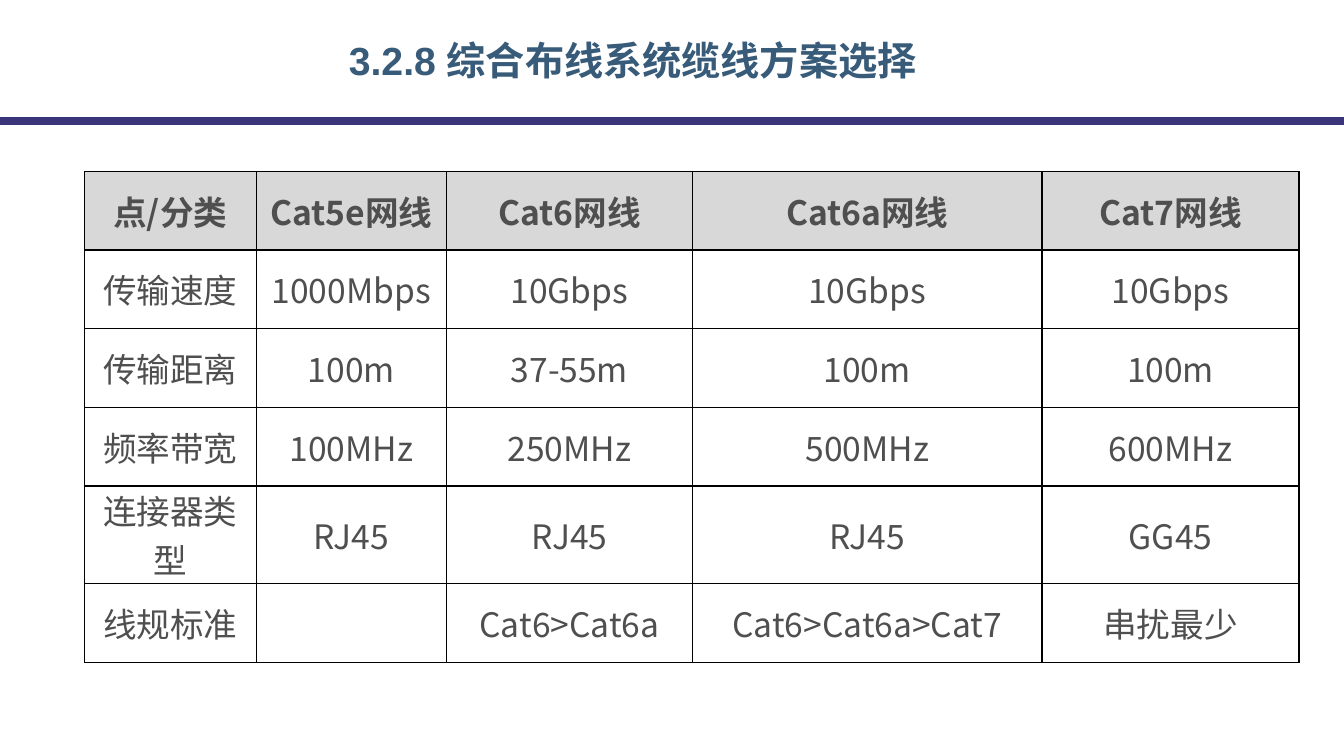
"""Build the slide comparing cable categories for structured cabling."""
from pptx import Presentation
from pptx.dml.color import RGBColor
from pptx.enum import shapes, text
from pptx.oxml import parse_xml
from pptx.oxml import ns
from pptx.util import Pt

HEADING = "3.2.8 综合布线系统缆线方案选择"
CABLES = [
    ("点/分类", "Cat5e网线", "Cat6网线", "Cat6a网线", "Cat7网线"),
    ("传输速度", "1000Mbps", "10Gbps", "10Gbps", "10Gbps"),
    ("传输距离", "100m", "37-55m", "100m", "100m"),
    ("频率带宽", "100MHz", "250MHz", "500MHz", "600MHz"),
    ("连接器类型", "RJ45", "RJ45", "RJ45", "GG45"),
    ("线规标准", "", "Cat6>Cat6a", "Cat6>Cat6a>Cat7", "串扰最少"),
]
COLUMN_WIDTHS = (122.7, 135.9, 175.7, 249.8, 183.5)
ROW_HEIGHT = 56.2
TABLE_LEFT, TABLE_TOP = 60.3, 122.4
SLIDE_WIDTH, SLIDE_HEIGHT = 960, 540
RULE_Y = 86.4
CJK_FONT = "Noto Sans CJK SC"


def color(value):
    return RGBColor.from_string(value)


def write(frame, words, *, size, font, fill, bold=False, align=text.PP_ALIGN.LEFT):
    frame.vertical_anchor = text.MSO_ANCHOR.MIDDLE
    paragraph = frame.paragraphs[0]
    paragraph.alignment = align
    run = paragraph.add_run()
    run.text = words
    run.font.size, run.font.bold, run.font.name = Pt(size), bold, font
    run.font.color.rgb = color(fill)
    east_asian = parse_xml(f'<a:ea {ns.nsdecls("a")} typeface="{CJK_FONT}"/>')
    run.font._element.find(ns.qn("a:latin")).addnext(east_asian)


def add_borders(cell, line="000000", width=1):
    properties = cell._tc.get_or_add_tcPr()
    for side in "LRTB":
        properties.append(parse_xml(
            f'<a:ln{side} {ns.nsdecls("a")} w="{Pt(width)}"><a:solidFill>'
            f'<a:srgbClr val="{line}"/></a:solidFill></a:ln{side}>'))


def add_heading(slide):
    heading = slide.shapes.title
    heading.left, heading.top, heading.width, heading.height = (
        Pt(242), Pt(20), Pt(556), Pt(45))
    write(heading.text_frame, HEADING, size=28, font="Arial", fill="375B79", bold=True)


def add_rule(slide):
    rule = slide.shapes.add_connector(
        shapes.MSO_CONNECTOR.STRAIGHT, Pt(SLIDE_WIDTH), Pt(RULE_Y), Pt(0), Pt(RULE_Y))
    rule.line.color.rgb = color("3A357B")
    rule.line.width = Pt(5.75)
    rule._element.spPr.append(parse_xml(f'<a:effectLst {ns.nsdecls("a")}/>'))


def add_cables(slide):
    cables = slide.shapes.add_table(
        len(CABLES), len(COLUMN_WIDTHS), Pt(TABLE_LEFT), Pt(TABLE_TOP),
        Pt(sum(COLUMN_WIDTHS)), Pt(ROW_HEIGHT * len(CABLES))).table
    for column, width in zip(cables.columns, COLUMN_WIDTHS):
        column.width = Pt(width)
    for row_index, entries in enumerate(CABLES):
        cables.rows[row_index].height = Pt(ROW_HEIGHT)
        is_header = row_index == 0
        for column_index, entry in enumerate(entries):
            cell = cables.cell(row_index, column_index)
            add_borders(cell)
            if is_header:
                cell.fill.solid()
                cell.fill.fore_color.rgb = color("D8D8D8")
            else:
                cell.fill.background()
            cell.margin_left = cell.margin_right = Pt(5)
            cell.margin_top = cell.margin_bottom = Pt(0)
            cell.vertical_anchor = text.MSO_ANCHOR.MIDDLE
            if entry:
                write(cell.text_frame, entry, size=24, font=CJK_FONT, fill="4F4F4F",
                      bold=is_header, align=text.PP_ALIGN.CENTER)


def main():
    deck = Presentation()
    deck.slide_width, deck.slide_height = Pt(SLIDE_WIDTH), Pt(SLIDE_HEIGHT)
    slide = deck.slides.add_slide(deck.slide_layouts[5])
    add_rule(slide)
    add_heading(slide)
    add_cables(slide)
    deck.save("out.pptx")


if __name__ == "__main__":
    main()
